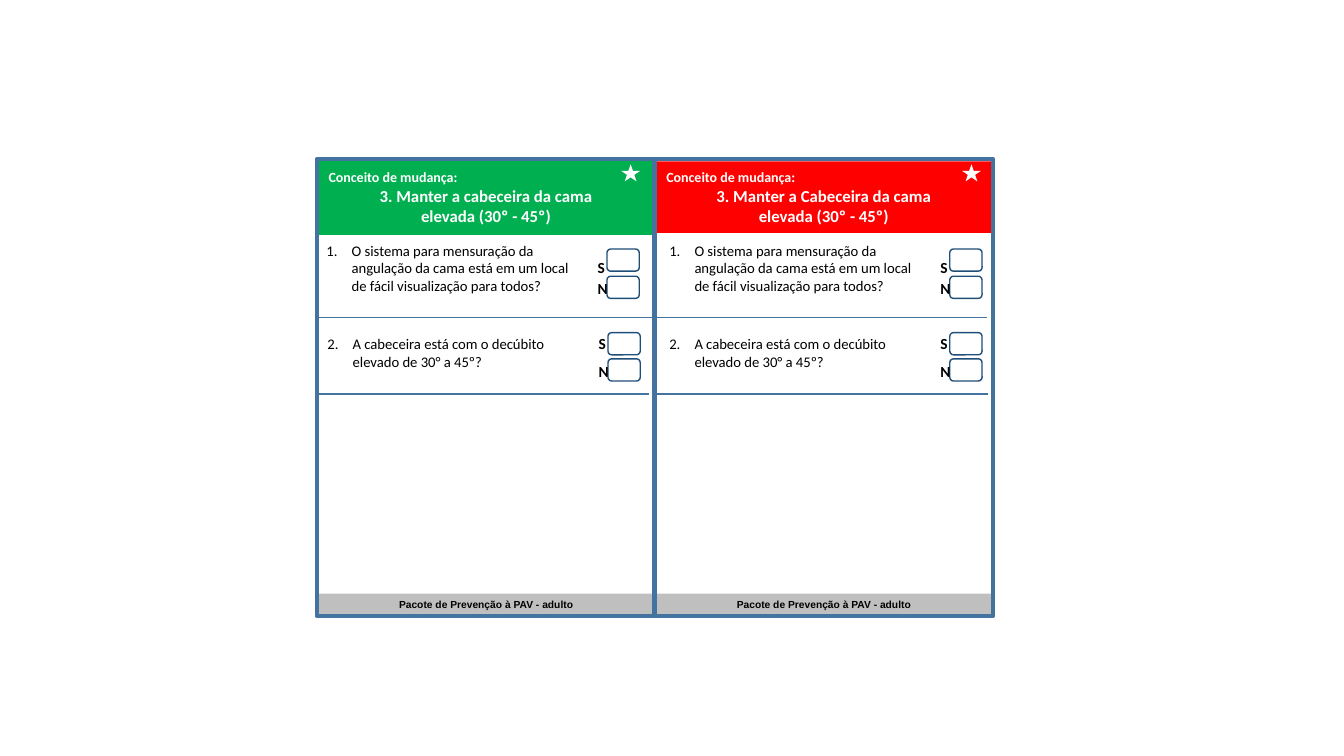
"""Build a slide with two audit cards on keeping the bed headrest raised."""
from dataclasses import dataclass

from lxml.etree import SubElement
from pptx import Presentation
from pptx.dml.color import RGBColor
from pptx.enum.shapes import MSO_CONNECTOR as Connector, MSO_SHAPE as Preset
from pptx.enum.text import MSO_ANCHOR as Anchor, PP_ALIGN as Align
from pptx.oxml.ns import qn
from pptx.shapes.autoshape import Shape
from pptx.shapes.shapetree import GroupShapes, SlideShapes
from pptx.text.text import TextFrame
from pptx.util import Pt

PX = 9144
COLORS = {
    "green": "00B050", "red": "FF0000", "gray": "BFBFBF", "white": "FFFFFF",
    "black": "000000", "frame": "43739E", "checkbox": "1F4E79",
}
FORMATS = {
    "lead": {"name": "Calibri", "size": Pt(10), "bold": True},
    "title": {"name": "Calibri", "size": Pt(12), "bold": True},
    "question": {"name": "Calibri", "size": Pt(10.5), "bold": False},
    "answer": {"name": "Calibri", "size": Pt(11), "bold": True},
    "footer": {"name": "Arial", "size": Pt(7.3), "bold": True},
}


@dataclass(frozen=True)
class Box:
    left: int
    top: int
    width: int
    height: int

    def emu(self) -> list[int]:
        return [side * PX for side in (self.left, self.top, self.width, self.height)]


@dataclass(frozen=True)
class Question:
    number: int
    text: str
    top: int
    height: int
    bottom_inset: int
    checkbox_tops: tuple[int, int]
    letter_tops: tuple[int, int]
    rule_top: int


@dataclass(frozen=True)
class Card:
    color: str
    title: str
    frame_left: int
    band_left: int
    header_top: int
    header_height: int
    star_left: int
    question_lefts: tuple[int, int]
    rule_lefts: tuple[int, int]


QUESTIONS = (
    Question(1, "O sistema para mensuração da angulação da cama está em um local "
             "de fácil visualização para todos?", 248, 54, 23, (247, 274), (257, 279), 315),
    Question(2, "A cabeceira está com o decúbito elevado de 30° a 45º?",
             315, 70, 5, (330, 356), (333, 361), 391),
)
CARDS = (
    Card("green", "3. Manter a cabeceira da cama", 314, 316, 159, 74, 616, (314, 315), (316, 313)),
    Card("red", "3. Manter a Cabeceira da cama", 650, 651, 160, 71, 954, (654, 654), (648, 649)),
)
BAND_WIDTH = 332
RULE_LENGTH = 331
ANSWERS = (("S", 16), ("N", 14))


def color_of(key: str) -> RGBColor:
    return RGBColor.from_string(COLORS[key])


def write(frame: TextFrame, text: str, style: str, color: str, align: Align) -> None:
    paragraph = frame.paragraphs[0]
    if paragraph.runs:
        paragraph = frame.add_paragraph()
    paragraph.alignment = align
    run = paragraph.add_run()
    run.text = text
    for attribute, value in FORMATS[style].items():
        setattr(run.font, attribute, value)
    run.font.color.rgb = color_of(color)


def draw_shape(shapes: SlideShapes | GroupShapes, preset: Preset, box: Box,
               fill: str = "", line: str = "", weight: float = 1) -> Shape:
    shape = shapes.add_shape(preset, *box.emu())
    shape.shadow.inherit = False
    if fill:
        shape.fill.solid()
        shape.fill.fore_color.rgb = color_of(fill)
    else:
        shape.fill.background()
    if line:
        shape.line.color.rgb = color_of(line)
        shape.line.width = Pt(weight)
    else:
        shape.line.fill.background()
    shape.text_frame.word_wrap = True
    shape.text_frame.vertical_anchor = Anchor.MIDDLE
    return shape


def draw_text(shapes: GroupShapes, box: Box, text: str, style: str, align: Align) -> TextFrame:
    frame = shapes.add_textbox(*box.emu()).text_frame
    frame.word_wrap = True
    frame.vertical_anchor = Anchor.MIDDLE
    write(frame, text, style, "black", align)
    return frame


def draw_rule(shapes: SlideShapes, left: int, top: int) -> None:
    rule = shapes.add_connector(Connector.STRAIGHT, left * PX, top * PX,
                                (left + RULE_LENGTH) * PX, top * PX)
    rule.line.color.rgb = color_of("frame")
    rule.line.width = Pt(1)
    SubElement(rule._element.spPr, qn("a:effectLst"))


def draw_question(shapes: SlideShapes, question: Question, left: int) -> None:
    group = shapes.add_group_shape().shapes
    wording = draw_text(group, Box(left, question.top, 274, question.height),
                        question.text, "question", Align.LEFT)
    wording.margin_bottom = question.bottom_inset * PX
    properties = wording.paragraphs[0]._p.get_or_add_pPr()
    properties.set("marL", str(25 * PX))
    properties.set("indent", str(-25 * PX))
    SubElement(properties, qn("a:buFont"), typeface="+mj-lt")
    SubElement(properties, qn("a:buAutoNum"), type="arabicPeriod", startAt=str(question.number))
    for top in question.checkbox_tops:
        draw_shape(group, Preset.ROUNDED_RECTANGLE, Box(left + 288, top, 32, 22), line="checkbox")
    for (letter, height), top in zip(ANSWERS, question.letter_tops):
        draw_text(group, Box(left + 269, top, 23, height), letter, "answer", Align.CENTER)


def draw_card(shapes: SlideShapes, card: Card) -> None:
    footer = draw_shape(shapes, Preset.RECTANGLE, Box(card.band_left, 589, BAND_WIDTH, 22), "gray")
    write(footer.text_frame, "Pacote de Prevenção à PAV - adulto", "footer", "black", Align.CENTER)
    header_box = Box(card.band_left, card.header_top, BAND_WIDTH, card.header_height)
    header = draw_shape(shapes, Preset.RECTANGLE, header_box, card.color).text_frame
    write(header, "Conceito de mudança:", "lead", "white", Align.LEFT)
    for line in (card.title, "elevada (30º - 45º)"):
        write(header, line, "title", "white", Align.CENTER)
    draw_shape(shapes, Preset.RECTANGLE, Box(card.frame_left, 158, 335, 453),
               line="frame", weight=3)
    draw_shape(shapes, Preset.STAR_5_POINT, Box(card.star_left, 163, 19, 17), "white")
    for question, left, rule_left in zip(QUESTIONS, card.question_lefts, card.rule_lefts):
        draw_question(shapes, question, left)
        draw_rule(shapes, rule_left, question.rule_top)


def main() -> None:
    deck = Presentation()
    deck.slide_width, deck.slide_height = 1333 * PX, 750 * PX
    slide = deck.slides.add_slide(deck.slide_layouts[6])
    for card in CARDS:
        draw_card(slide.shapes, card)
    deck.save("out.pptx")


if __name__ == "__main__":
    main()
